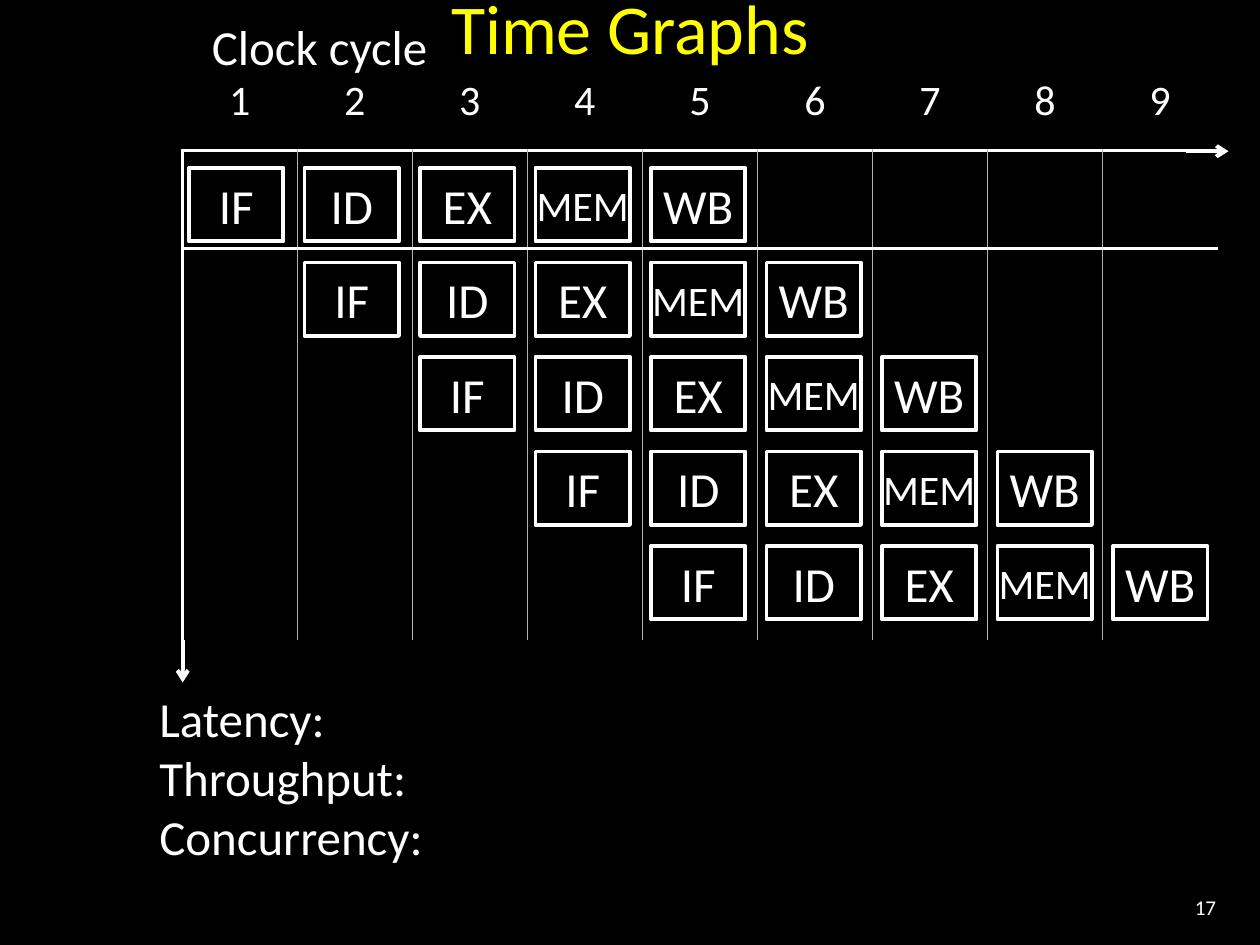
from lxml import etree
from pptx import Presentation
from pptx import util as u
from pptx.dml.color import RGBColor
from pptx.enum import shapes, text
from pptx.oxml.ns import qn

THEME = {
    "font": "Calibri",
    "back": RGBColor.from_string("000000"),
    "ink": RGBColor.from_string("FFFFFF"),
    "heading": RGBColor.from_string("FFFF00"),
    "axis": ("FFFFFF", 2.25),
    "divider": ("B3B3B3", 1),
    "title": 40, "body": 28, "small": 24, "number": 12,
    "plain_table": "{2D5ABB26-0587-4C30-8999-92F81FD0307C}",
}
LEFT, CENTER, RIGHT = text.PP_ALIGN.LEFT, text.PP_ALIGN.CENTER, text.PP_ALIGN.RIGHT
MIDDLE, TOP = text.MSO_ANCHOR.MIDDLE, text.MSO_ANCHOR.TOP
TIGHT = dict.fromkeys(("margin_left", "margin_right", "margin_top", "margin_bottom"), 0)

deck = Presentation()
deck.slide_width, deck.slide_height = u.Inches(10), u.Inches(7.5)
UNIT = deck.slide_width / 120


def grid(*counts):
    return [round(count * UNIT) for count in counts]


def write(frame, lines, size, align=LEFT, color=THEME["ink"], **formats):
    frame.text = "\n".join(lines)
    for name, value in formats.items():
        setattr(frame, name, value)
    for paragraph in frame.paragraphs:
        paragraph.alignment = align
        font = paragraph.runs[0].font
        for name, value in {"name": THEME["font"], "size": u.Pt(size)}.items():
            setattr(font, name, value)
        font.color.rgb = color


slide = deck.slides.add_slide(deck.slide_layouts[5])
slide.background.fill.solid()
slide.background.fill.fore_color.rgb = THEME["back"]

heading = slide.shapes.title
for name, value in zip(("left", "top", "width", "height"), grid(0, 0, 120, 5)):
    setattr(heading, name, value)
write(heading.text_frame, ["Time Graphs"], THEME["title"], CENTER, THEME["heading"],
      vertical_anchor=MIDDLE, auto_size=text.MSO_AUTO_SIZE.NONE, word_wrap=True)

ROWS, COLUMNS = 6, 10
timeline = slide.shapes.add_table(ROWS, COLUMNS, *grid(5, 5, 111, 56)).table
timeline.first_row = timeline.horz_banding = False
timeline._tbl.tblPr.find(qn("a:tableStyleId")).text = THEME["plain_table"]
for number, column in enumerate(timeline.columns):
    column.width = grid(10.96 if number else 12.36)[0]
for row in timeline.rows:
    row.height = grid(56 / ROWS)[0]

for r in range(ROWS):
    for c in range(COLUMNS):
        cell = timeline.cell(r, c)
        cell.fill.background()
        edges = {}
        if r == 0 and c:
            write(cell.text_frame, [str(c)], THEME["small"], CENTER)
            for name, value in {**TIGHT, "vertical_anchor": MIDDLE}.items():
                setattr(cell, name, value)
            edges["lnB"] = THEME["axis"]
        if r:
            if c:
                edges["lnL"] = THEME["axis" if c == 1 else "divider"]
            if c < COLUMNS - 1:
                edges["lnR"] = THEME["divider" if c else "axis"]
            if r == 1 and c:
                edges["lnT"] = THEME["axis"]
        properties = cell._tc.get_or_add_tcPr()
        for place, (edge, (color, width)) in enumerate(edges.items()):
            border = etree.Element(qn(f"a:{edge}"), w=str(u.Pt(width)))
            fill = etree.SubElement(border, qn("a:solidFill"))
            etree.SubElement(fill, qn("a:srgbClr"), val=color)
            properties.insert(place, border)

for ends in ((113, 14.4, 117, 14.4), (17.4, 61, 17.4, 65)):
    arrow = slide.shapes.add_connector(shapes.MSO_CONNECTOR.STRAIGHT, *grid(*ends))
    arrow.line.color.rgb = THEME["ink"]
    arrow.line.width = u.Pt(THEME["axis"][1])
    etree.SubElement(arrow.line._get_or_add_ln(), qn("a:tailEnd"), type="arrow")
    etree.SubElement(arrow._element.spPr, qn("a:effectLst"))

for lines, place, size, align, anchor in (
    (["Clock cycle"], (19, 1, 31, 6.84), THEME["body"], LEFT, TOP),
    (["Latency:", "Throughput:", "Concurrency:"], (14, 65, 30, 18.1), THEME["body"], LEFT, TOP),
    (["17"], (107, 84, 10, 4.8), THEME["number"], RIGHT, MIDDLE),
):
    label = slide.shapes.add_textbox(*grid(*place))
    write(label.text_frame, lines, size, align, word_wrap=True, vertical_anchor=anchor)

for instruction in range(5):
    for step, stage in enumerate(("IF", "ID", "EX", "MEM", "WB")):
        place = grid(18 + 11 * (instruction + step), 16 + 9 * instruction, 9, 7)
        box = slide.shapes.add_shape(shapes.MSO_SHAPE.RECTANGLE, *place)
        box.shadow.inherit = False
        box.fill.background()
        box.line.color.rgb = THEME["ink"]
        box.line.width = u.Pt(THEME["axis"][1])
        fit = {**TIGHT, "word_wrap": False} if stage in ("MEM", "WB") else {}
        write(box.text_frame, [stage], THEME["small" if stage == "MEM" else "body"],
              CENTER, vertical_anchor=MIDDLE, **fit)

deck.save("out.pptx")
